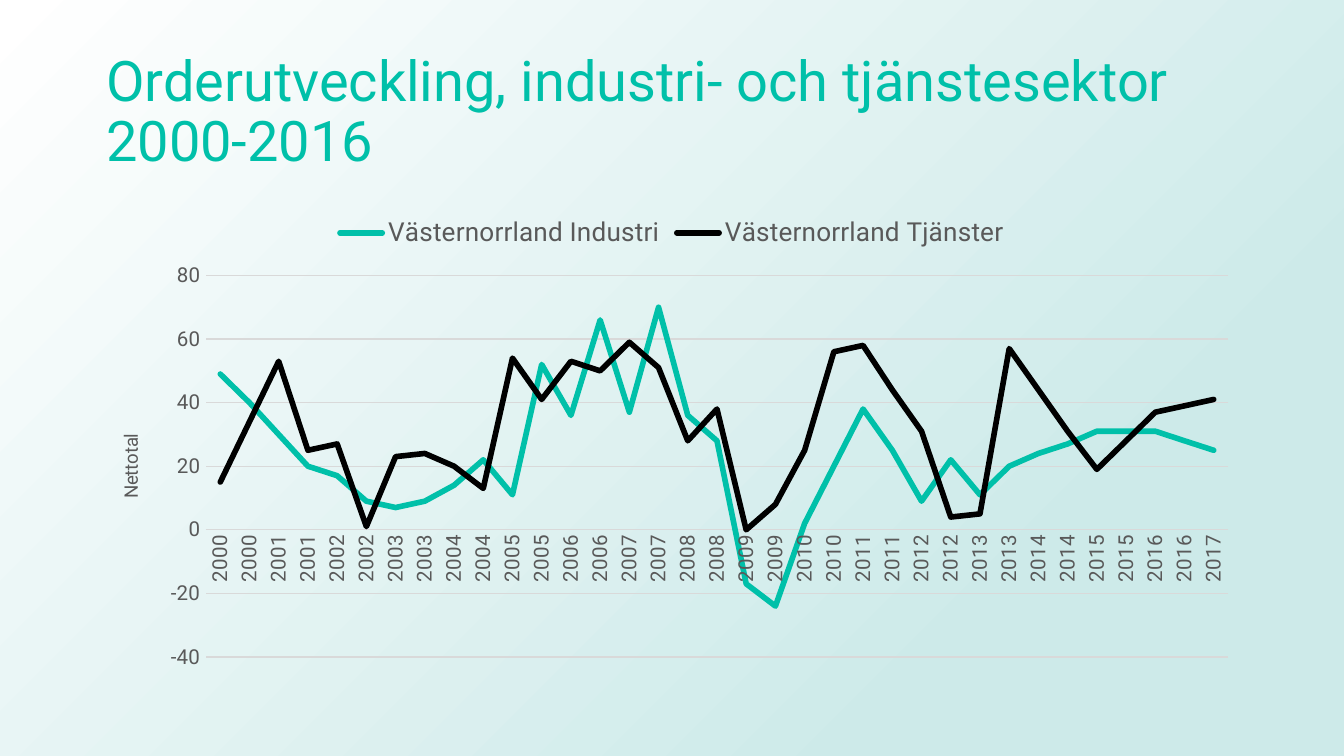
"""Build a slide with a line chart of order development in two sectors."""
import pptx
import pptx.chart.data
import pptx.dml.color
import pptx.enum.chart
import pptx.enum.shapes
import pptx.enum.text
import pptx.oxml
import pptx.oxml.ns
import pptx.util
from pptx.util import Inches

COLORS = {"teal": "00C0A9", "black": "000000", "gray": "595959",
          "grid": "D9D9D9", "mint": "CDEAE9", "white": "FFFFFF"}
FONT = "Roboto"
SLIDE_WIDTH = Inches(10)
SLIDE_HEIGHT = SLIDE_WIDTH * 9 // 16
CHART_WIDTH, CHART_HEIGHT = 8.62, 3.56
YEARS = [str(2000 + index // 2) for index in range(35)]
SERIES = {
    "Västernorrland Industri": ("teal", [
        49, 40, 30, 20, 17, 9, 7, 9, 14, 22, 11, 52, 36, 66, 37, 70, 36, 28,
        -17, -24, 2, 20, 38, 25, 9, 22, 11, 20, 24, 27, 31, 31, 31, 28, 25]),
    "Västernorrland Tjänster": ("black", [
        15, 34, 53, 25, 27, 1, 23, 24, 20, 13, 54, 41, 53, 50, 59, 51, 28, 38,
        0, 8, 25, 56, 58, 44, 31, 4, 5, 57, 44, 31, 19, 28, 37, 39, 41]),
}


def apply_format(target, values):
    for name, value in values.items():
        setattr(target, name, value)


def rgb(color):
    return pptx.dml.color.RGBColor.from_string(COLORS[color])


def format_font(font, size, color="gray"):
    apply_format(font, {"name": FONT, "size": pptx.util.Pt(size), "bold": False})
    font.color.rgb = rgb(color)


def format_line(line, color, width):
    line.color.rgb = rgb(color)
    line.width = pptx.util.Pt(width)


def add_master_background(slide):
    shape = slide.shapes.add_shape(
        pptx.enum.shapes.MSO_SHAPE.RECTANGLE, 0, 0, SLIDE_WIDTH, SLIDE_HEIGHT)
    shape.shadow.inherit = False
    shape.line.fill.background()
    gradient = pptx.oxml.parse_xml(
        f'<a:gradFill {pptx.oxml.ns.nsdecls("a")} rotWithShape="1"><a:gsLst>'
        f'<a:gs pos="23000"><a:srgbClr val="{COLORS["mint"]}"/></a:gs>'
        f'<a:gs pos="100000"><a:srgbClr val="{COLORS["white"]}"/></a:gs>'
        '</a:gsLst><a:path path="circle">'
        '<a:fillToRect l="100000" t="100000"/></a:path></a:gradFill>')
    geometry = shape.element.spPr.find(pptx.oxml.ns.qn("a:prstGeom"))
    geometry.addnext(gradient)
    shape.element.nvSpPr.cNvPr.set("id", "100")
    slide.slide_layout.slide_master.shapes.element.insert(2, shape.element)


def add_title(slide, text):
    title = slide.shapes.title
    apply_format(title, {"left": Inches(0.69), "top": Inches(0.3),
                         "width": Inches(8.62), "height": Inches(1.09)})
    frame = title.text_frame
    frame.text = text
    apply_format(frame, {"word_wrap": True,
                         "auto_size": pptx.enum.text.MSO_AUTO_SIZE.NONE,
                         "vertical_anchor": pptx.enum.text.MSO_ANCHOR.MIDDLE})
    paragraph = frame.paragraphs[0]
    apply_format(paragraph, {"alignment": pptx.enum.text.PP_ALIGN.LEFT,
                             "line_spacing": 0.9})
    format_font(paragraph.runs[0].font, 30, "teal")


def rotate_text(element):
    body = element.find(".//" + pptx.oxml.ns.qn("a:bodyPr"))
    body.set("rot", "-5400000")
    body.set("vert", "horz")


def format_axes(chart):
    tick_none = pptx.enum.chart.XL_TICK_MARK.NONE
    years, totals = chart.category_axis, chart.value_axis
    for axis in (years, totals):
        apply_format(axis, {"major_tick_mark": tick_none,
                            "minor_tick_mark": tick_none})
        format_font(axis.tick_labels.font, 11)
    format_line(years.format.line, "grid", 0.75)
    rotate_text(chart.element.find(".//" + pptx.oxml.ns.qn("c:catAx")))
    apply_format(totals, {"minimum_scale": -40, "maximum_scale": 80,
                          "major_unit": 20, "has_major_gridlines": True})
    apply_format(totals.tick_labels, {"number_format": "0",
                                      "number_format_is_linked": False})
    totals.format.line.fill.background()
    format_line(totals.major_gridlines.format.line, "grid", 0.75)
    frame = totals.axis_title.text_frame
    frame.text = "Nettotal"
    format_font(frame.paragraphs[0].runs[0].font, 10)
    rotate_text(chart.element.find(
        ".//" + pptx.oxml.ns.qn("c:valAx") + "/" + pptx.oxml.ns.qn("c:title")))


def place_plot(chart, left, top, width, height):
    area = chart.element.find(".//" + pptx.oxml.ns.qn("c:plotArea"))
    for layout in area.findall(pptx.oxml.ns.qn("c:layout")):
        area.remove(layout)
    entries = {"layoutTarget": "inner", "xMode": "edge", "yMode": "edge",
               "x": left / CHART_WIDTH, "y": top / CHART_HEIGHT,
               "w": width / CHART_WIDTH, "h": height / CHART_HEIGHT}
    children = "".join(f'<c:{name} val="{value}"/>' for name, value in entries.items())
    area.insert(0, pptx.oxml.parse_xml(
        f'<c:layout {pptx.oxml.ns.nsdecls("c")}><c:manualLayout>{children}'
        '</c:manualLayout></c:layout>'))


def add_order_chart(slide):
    data = pptx.chart.data.CategoryChartData()
    data.categories = YEARS
    for name, (_, values) in SERIES.items():
        data.add_series(name, values)
    chart = slide.shapes.add_chart(
        pptx.enum.chart.XL_CHART_TYPE.LINE, Inches(0.69), Inches(1.5),
        Inches(CHART_WIDTH), Inches(CHART_HEIGHT), data).chart
    apply_format(chart, {"has_title": False, "has_legend": True})
    apply_format(chart.font, {"name": "Calibri", "size": pptx.util.Pt(10)})
    apply_format(chart.legend, {
        "position": pptx.enum.chart.XL_LEGEND_POSITION.TOP,
        "include_in_layout": False})
    format_font(chart.legend.font, 14)
    plot = chart.plots[0]
    plot.vary_by_categories = False
    for series, (color, _) in zip(plot.series, SERIES.values()):
        series.smooth = False
        series.marker.style = pptx.enum.chart.XL_MARKER_STYLE.NONE
        format_line(series.format.line, color, 3)
        series.format.line.fill  
        for line in series.format.line.color and [] or []:
            pass
    format_axes(chart)
    for line in chart.element.iterfind(
            ".//" + pptx.oxml.ns.qn("c:ser") + "/" + pptx.oxml.ns.qn("c:spPr")
            + "/" + pptx.oxml.ns.qn("a:ln")):
        line.set("cap", "rnd")
    place_plot(chart, 0.84, 0.55, 7.61, 2.84)


def main():
    presentation = pptx.Presentation()
    apply_format(presentation, {"slide_width": SLIDE_WIDTH,
                                "slide_height": SLIDE_HEIGHT})
    slide = presentation.slides.add_slide(presentation.slide_layouts[5])
    add_master_background(slide)
    add_title(slide, "Orderutveckling, industri- och tjänstesektor 2000-2016")
    add_order_chart(slide)
    presentation.save("out.pptx")


if __name__ == "__main__":
    main()
